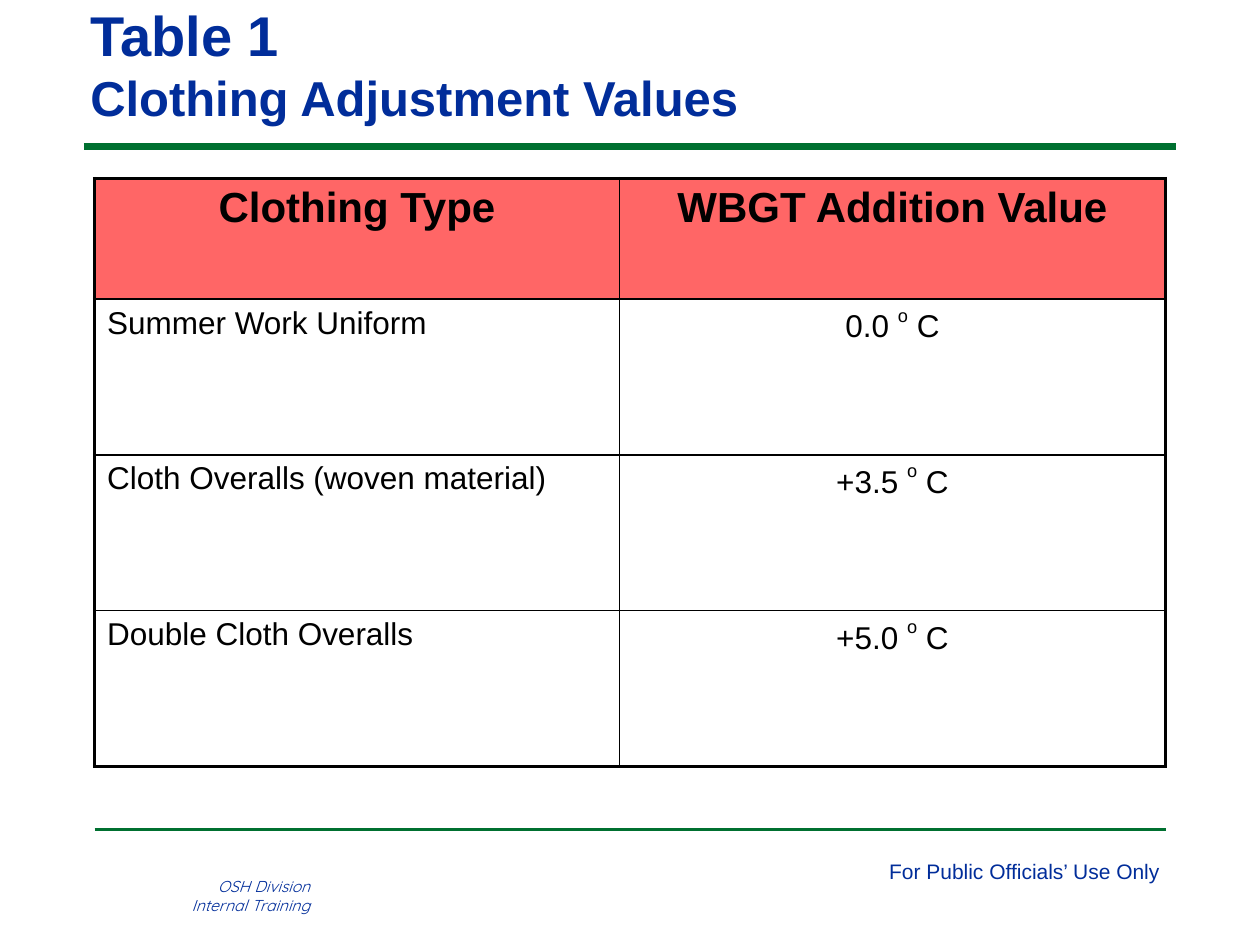
from pptx import Presentation
from pptx.dml.color import RGBColor
from pptx.enum.shapes import MSO_CONNECTOR as Connector
from pptx.enum.text import MSO_ANCHOR as Anchor, PP_ALIGN as Align
from pptx.oxml import parse_xml
from pptx.oxml.ns import nsdecls
from pptx.oxml.xmlchemy import OxmlElement
from pptx.util import Inches, Pt

BLUE = RGBColor(0x01, 0x2D, 0x9A)
GREEN = RGBColor(0x00, 0x70, 0x30)
CORAL = RGBColor(0xFF, 0x66, 0x66)
BLACK = RGBColor(0x00, 0x00, 0x00)


def grid(*units):
    """Turn grid units (120 columns by 90 rows on the slide) into lengths."""
    return [int(n * Inches(10) / 120) for n in units]


def write(p, text, size, color=BLACK, font="Arial", bold=False, italic=False,
          align=Align.LEFT, raised=False):
    p.alignment = align
    r = p.add_run()
    r.text = text
    r.font.name, r.font.size = font, Pt(size)
    r.font.bold, r.font.italic = bold, italic
    r.font.color.rgb = color
    if raised:
        r.font._element.set("baseline", "50000")


prs = Presentation()
prs.slide_width, prs.slide_height = grid(120, 90)
s = prs.slides.add_slide(prs.slide_layouts[5])

# Rules above and below the content
for left, right, y, width in [(8, 112, 14, 4), (9, 111, 79, 2)]:
    rule = s.shapes.add_connector(Connector.STRAIGHT, *grid(left, y, right, y))
    rule.line.color.rgb = GREEN
    rule.line.width = Pt(width)
    rule._element.spPr.append(OxmlElement("a:effectLst"))

# Title
title = s.shapes.title
title.left, title.top, title.width, title.height = grid(8, 0, 108, 12.1)
tf = title.text_frame
tf.word_wrap = True
tf.vertical_anchor = Anchor.MIDDLE
tf.margin_left = tf.margin_right = Inches(0.05)
tf.margin_top = tf.margin_bottom = 0
p = tf.paragraphs[0]
write(p, "Table 1 ", 32, BLUE, bold=True)
p.add_line_break()
write(p, "Clothing Adjustment Values", 28, BLUE, bold=True)

# Footers
tf = s.shapes.add_textbox(*grid(83.5, 81.2, 28.4, 3.6)).text_frame
tf.word_wrap = False
write(tf.paragraphs[0], "For Public Officials’ Use Only", 12, BLUE)

tf = s.shapes.add_textbox(*grid(14, 82.9, 16.7, 5.9)).text_frame
tf.word_wrap = False
division = dict(font="Quicksand", italic=True, align=Align.RIGHT)
write(tf.paragraphs[0], "OSH Division", 9, BLUE, **division)
write(tf.add_paragraph(), "Internal Training", 9, BLUE, **division)

# Table
HEADINGS = ["Clothing Type", "WBGT Addition Value"]
ADJUSTMENTS = [
    ("Summer Work Uniform", "0.0"),
    ("Cloth Overalls (woven material)", "+3.5"),
    ("Double Cloth Overalls", "+5.0"),
]
table = s.shapes.add_table(4, 2, *grid(9, 17, 102, 56)).table
for column, width in zip(table.columns, grid(50, 52)):
    column.width = width
for row, height in zip(table.rows, grid(11.5, *[44.5 / 3] * 3)):
    row.height = height

for column, heading in enumerate(HEADINGS):
    write(table.cell(0, column).text_frame.paragraphs[0], heading, 24,
          bold=True, align=Align.CENTER)
for row, (clothing, value) in enumerate(ADJUSTMENTS, start=1):
    write(table.cell(row, 0).text_frame.paragraphs[0], clothing, 18)
    p = table.cell(row, 1).text_frame.paragraphs[0]
    for text, raised in [(value + " ", False), ("o", True), (" C", False)]:
        write(p, text, 18, align=Align.CENTER, raised=raised)

# Cell fills, with a heavy outer frame and thin inner borders
for row in range(4):
    for column in range(2):
        cell = table.cell(row, column)
        if row == 0:
            cell.fill.solid()
            cell.fill.fore_color.rgb = CORAL
        else:
            cell.fill.background()
        outer = {"L": column == 0, "R": column == 1, "T": row == 0, "B": row == 3}
        for i, (side, heavy) in enumerate(outer.items()):
            border = parse_xml(
                f'<a:ln{side} {nsdecls("a")} w="{Pt(2.25 if heavy else 1)}">'
                f'<a:solidFill><a:srgbClr val="{BLACK}"/></a:solidFill></a:ln{side}>')
            cell._tc.get_or_add_tcPr().insert(i, border)

prs.save("out.pptx")
